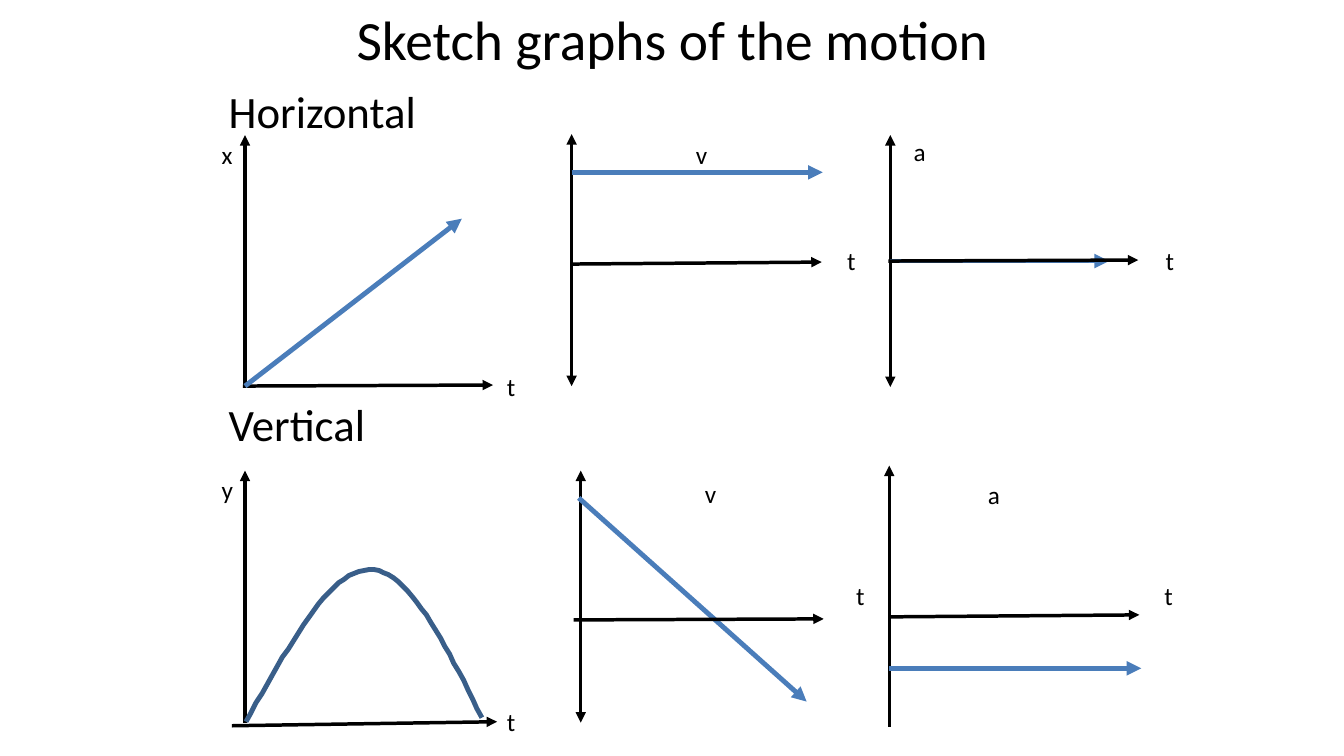
from lxml.etree import SubElement
from pptx import Presentation
from pptx.dml.color import RGBColor
from pptx.enum.shapes import MSO_CONNECTOR as Link
from pptx.enum.text import MSO_ANCHOR as Anchor, PP_ALIGN as Align
from pptx.oxml.ns import qn
from pptx.util import Pt

PX = 9144  # 100 px to the inch
BLACK, BLUE, NAVY = "000000", "4A7DBA", "395E89"

# text, box (left, top, width, height), size, format
HEADS = [
    ("Sketch graphs of the motion", (217, 0, 900, 77), 39.6,
     {"align": Align.CENTER, "anchor": Anchor.MIDDLE}),
    ("Horizontal", (217, 78, 900, 60), 32, {}),
    ("Vertical", (217, 389, 900, 60), 32, {}),
]

# Each graph: labels (text, left, top, width), upright axis (start, end, heads)
GRAPHS = [
    ([("x", 210, 133, 33), ("t", 493, 363, 33)], ((243, 384), (243, 134), 1)),
    ([("v", 682, 133, 18), ("t", 832, 238, 18)], ((567, 133), (567, 383), 2)),
    ([("a", 898, 130, 18), ("t", 1148, 238, 18)], ((883, 134), (883, 384), 2)),
    ([("y", 210, 466, 33), ("t", 493, 696, 33)], ((243, 717), (243, 467), 1)),
    ([("v", 691, 470, 18), ("t", 841, 571, 18)], ((576, 467), (576, 717), 2)),
    ([("a", 970, 471, 21), ("t", 1145, 571, 21)], ((882, 721), (882, 462), 1)),
]

PLOTS = [
    ((243, 383), (458, 217)),
    ((567, 171), (816, 171)),
    ((883, 259), (1100, 259)),
    ((574, 494), (800, 696)),
    ((882, 663), (1132, 663)),
]

TIMES = [
    ((241, 383), (489, 382)),
    ((230, 720), (493, 716)),
    ((567, 262), (815, 260)),
    ((881, 259), (1129, 258)),
    ((882, 612), (1130, 610)),
    ((569, 615), (817, 614)),
]

# Bezier control points of the height curve, two joined pieces
ARCS = [
    [(244, 716), (286, 641), (327, 566), (366, 565)],
    [(366, 565), (405, 564), (441, 638), (478, 712)],
]
STEPS = 24


def paint(hue):
    return RGBColor.from_string(hue)


def write(text, box, size, align=Align.LEFT, anchor=Anchor.TOP):
    frame = shapes.add_textbox(*(n * PX for n in box)).text_frame
    frame.word_wrap = True
    frame.vertical_anchor = anchor
    para = frame.paragraphs[0]
    para.alignment = align
    run = para.add_run()
    run.text = text
    for name, value in {"name": "Calibri", "size": Pt(size)}.items():
        setattr(run.font, name, value)
    run.font.color.rgb = paint(BLACK)


def arrow(start, end, hue=BLACK, width=2.5, heads=1):
    """Draw a line with a head at its end, or at both ends."""
    link = shapes.add_connector(Link.STRAIGHT, *(n * PX for n in start + end))
    link.line.color.rgb = paint(hue)
    link.line.width = Pt(width)
    stroke = link.line._get_or_add_ln()
    for tag in ("a:headEnd", "a:tailEnd")[2 - heads:]:
        SubElement(stroke, qn(tag), type="triangle")
    SubElement(link._element.spPr, qn("a:effectLst"))


def bezier(ends, t):
    """Return the point at t on a cubic curve."""
    parts = ((1 - t) ** 3, 3 * t * (1 - t) ** 2, 3 * t * t * (1 - t), t ** 3)
    return tuple(sum(p * n for p, n in zip(parts, axis)) for axis in zip(*ends))


def curve(arcs):
    spots = [bezier(arc, i / STEPS) for arc in arcs for i in range(1, STEPS + 1)]
    pen = shapes.build_freeform(*arcs[0][0], scale=PX)
    pen.add_line_segments(spots, close=False)
    shape = pen.convert_to_shape()
    shape.shadow.inherit = False
    shape.fill.background()
    shape.line.color.rgb = paint(NAVY)
    shape.line.width = Pt(3.5)


deck = Presentation()
deck.slide_width, deck.slide_height = 1333 * PX, 750 * PX
shapes = deck.slides.add_slide(deck.slide_layouts[6]).shapes

for text, box, size, form in HEADS:
    write(text, box, size, **form)
for labels, (start, end, heads) in GRAPHS:
    arrow(start, end, heads=heads)
    for text, left, top, width in labels:
        write(text, (left, top, width, 40), 18)
# The first two time axes lie under the plots, the others over them
for start, end in TIMES[:2]:
    arrow(start, end)
for start, end in PLOTS:
    arrow(start, end, BLUE, 3.5)
curve(ARCS)
for start, end in TIMES[2:]:
    arrow(start, end)

deck.save("out.pptx")
